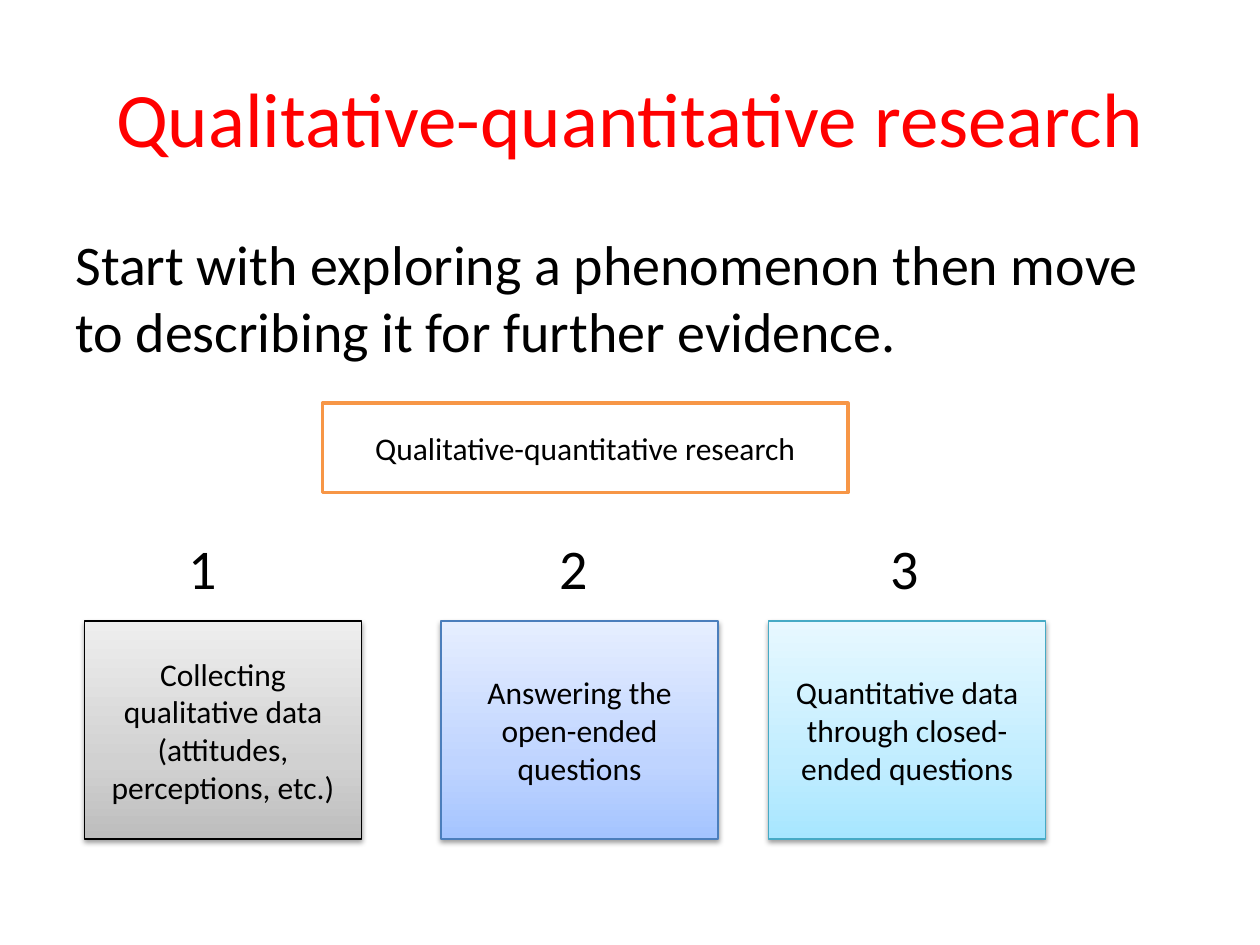
from lxml import etree
from pptx import Presentation
from pptx.dml.color import RGBColor
from pptx.enum import shapes, text
from pptx.oxml import ns
from pptx.util import Inches, Pt

COLORS = {"title": "FF0000", "text": "000000", "paper": "FFFFFF",
          "frame": "F79646"}
STOPS = (0, 35, 100)
CARD_W, CARD_H, CARD_Y = 2.2, 1.73, 4.93
NUM_W, NUM_H, NUM_Y = 0.8, 0.64, 4.18

# left, number centre, line colour, gradient from bottom to top, wording
CARDS = [
    (0.67, 1.61, "000000", ("BDBDBD", "D1D1D1", "EEEEEE"),
     "Collecting qualitative data (attitudes, perceptions, etc.)"),
    (3.5, 4.55, "4B7EBC", ("A4C4FF", "BFD4FF", "E6EEFF"),
     "Answering the open-ended questions"),
    (6.1, 7.18, "46AAC5", ("A7E6FF", "C1EDFF", "E7F8FF"),
     "Quantitative data through closed-ended questions"),
]


def rgb(code):
    return RGBColor.from_string(code)


def write(shape, words, size, color=COLORS["text"],
          align=text.PP_ALIGN.CENTER, anchor=text.MSO_ANCHOR.MIDDLE):
    frame = shape.text_frame
    frame.word_wrap = True
    frame.vertical_anchor = anchor
    para = frame.paragraphs[0]
    para.text = words
    para.alignment = align
    para.font.name = "Calibri"
    para.font.size = Pt(size)
    para.font.color.rgb = rgb(color)


def add_text(slide, box, words, **style):
    label = slide.shapes.add_textbox(*map(Inches, box))
    write(label, words, 32, **style)


def add_box(slide, box, words, line, width):
    rect = slide.shapes.add_shape(shapes.MSO_SHAPE.RECTANGLE,
                                  *map(Inches, box))
    rect.shadow.inherit = False
    rect.fill.solid()
    rect.fill.fore_color.rgb = rgb(COLORS["paper"])
    rect.line.color.rgb = rgb(line)
    rect.line.width = Pt(width)
    write(rect, words, 18)
    return rect


def add_node(parent, tag, **attrs):
    return etree.SubElement(parent, ns.qn(tag), **attrs)


def shade(rect, codes):
    rect.fill.gradient()
    rect.fill.gradient_angle = 90
    stops = rect._element.spPr.find(".//" + ns.qn("a:gsLst"))
    stops.clear()
    for pos, code in zip(STOPS, codes):
        stop = add_node(stops, "a:gs", pos=str(pos * 1000))
        add_node(stop, "a:srgbClr", val=code)


def drop_shadow(rect):
    effects = rect._element.spPr.find(ns.qn("a:effectLst"))
    outer = add_node(effects, "a:outerShdw", blurRad=str(Pt(3.1)),
                     dist=str(Pt(1.6)), dir="5400000", rotWithShape="0")
    tint = add_node(outer, "a:srgbClr", val=COLORS["text"])
    add_node(tint, "a:alpha", val="38000")


def main():
    deck = Presentation()
    deck.slide_width, deck.slide_height = Inches(10), Inches(7.5)
    slide = deck.slides.add_slide(deck.slide_layouts[5])

    # Title and statement
    title = slide.shapes.title
    title.left, title.top, title.width, title.height = map(
        Inches, (0.5, 0.3, 9, 1.25))
    write(title, "Qualitative-quantitative research", 44, COLORS["title"])
    add_text(slide, (0.5, 1.77, 9, 1.2),
             "Start with exploring a phenomenon then move to describing it "
             "for further evidence.",
             align=text.PP_ALIGN.LEFT, anchor=text.MSO_ANCHOR.TOP)

    # Heading box
    add_box(slide, (2.56, 3.2, 4.17, 0.71),
            "Qualitative-quantitative research", COLORS["frame"], 2)

    # Numbered steps
    for num, (left, mid, line, codes, words) in enumerate(CARDS, 1):
        add_text(slide, (mid - NUM_W / 2, NUM_Y, NUM_W, NUM_H), str(num))
        card = add_box(slide, (left, CARD_Y, CARD_W, CARD_H),
                       words, line, 0.75)
        shade(card, codes)
        drop_shadow(card)

    deck.save("out.pptx")


if __name__ == "__main__":
    main()
